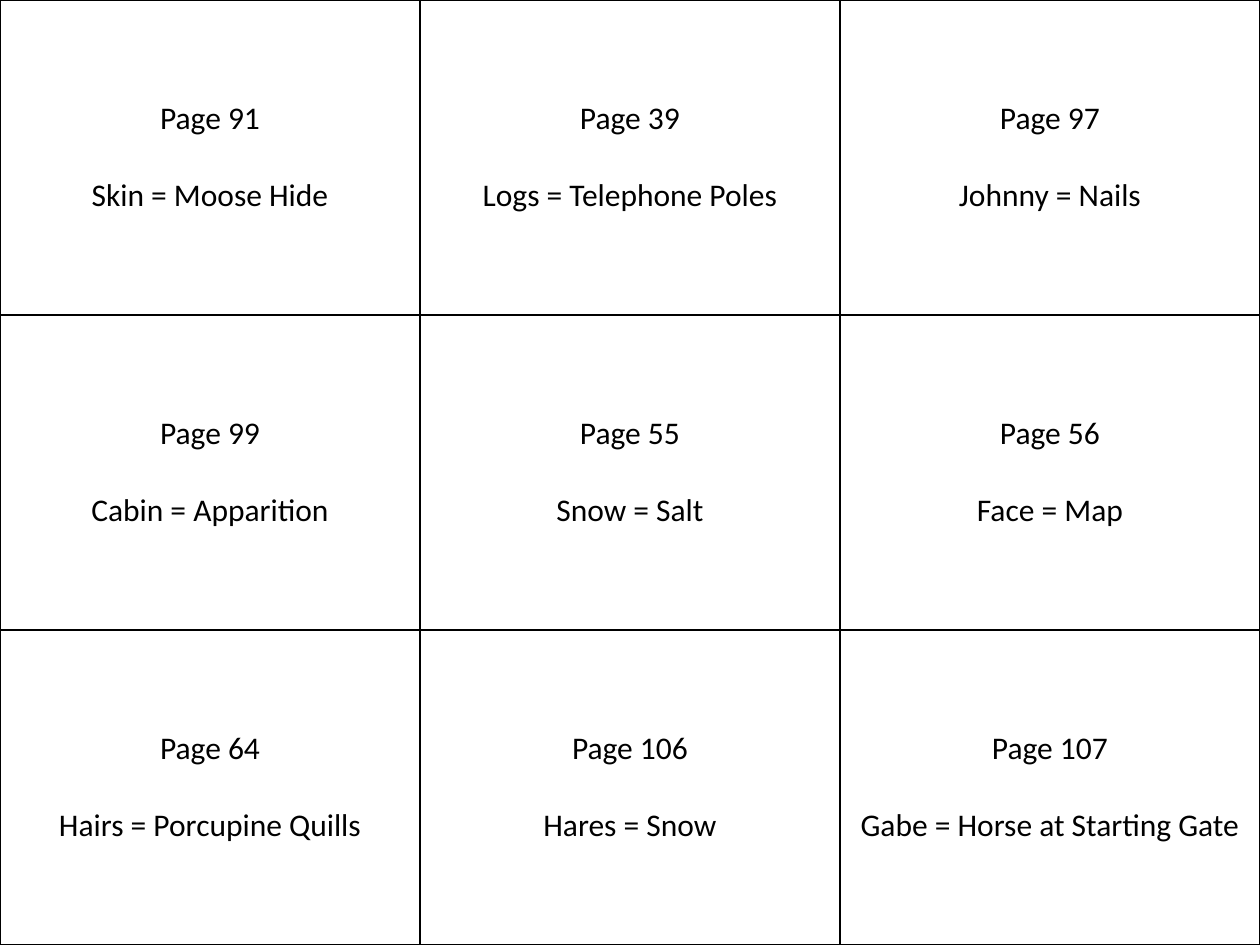
"""Build a three-by-three grid of page and metaphor cards."""
from dataclasses import dataclass

import pptx
import pptx.dml.color
import pptx.enum.text
import pptx.oxml
import pptx.oxml.ns
import pptx.table
import pptx.util

BLACK = pptx.dml.color.RGBColor(0x00, 0x00, 0x00)
WIDTH, HEIGHT = pptx.util.Inches(10), pptx.util.Inches(7.5)
COLS = ROWS = 3
LINE_GAP = pptx.util.Pt(22)
BORDER = pptx.util.Pt(1)
FONT = {"name": "Calibri", "size": pptx.util.Pt(18), "bold": False}


@dataclass(frozen=True)
class Card:
    """A page number and the comparison found on it."""

    page: int
    subject: str
    image: str


CARDS = [
    Card(91, "Skin", "Moose Hide"),
    Card(39, "Logs", "Telephone Poles"),
    Card(97, "Johnny", "Nails"),
    Card(99, "Cabin", "Apparition"),
    Card(55, "Snow", "Salt"),
    Card(56, "Face", "Map"),
    Card(64, "Hairs", "Porcupine Quills"),
    Card(106, "Hares", "Snow"),
    Card(107, "Gabe", "Horse at Starting Gate"),
]


def add_borders(cell: pptx.table._Cell) -> None:
    """Draw a solid line on all four sides of a cell."""
    props = cell._tc.get_or_add_tcPr()
    for i, side in enumerate(("lnL", "lnR", "lnT", "lnB")):
        line = pptx.oxml.parse_xml(
            f'<a:{side} {pptx.oxml.ns.nsdecls("a")} w="{BORDER}"><a:solidFill>'
            f'<a:srgbClr val="{BLACK}"/></a:solidFill></a:{side}>'
        )
        props.insert(i, line)


def fill_cell(cell: pptx.table._Cell, card: Card) -> None:
    """Write a card into a cell and centre it."""
    cell.fill.background()
    cell.vertical_anchor = pptx.enum.text.MSO_ANCHOR.MIDDLE
    tf = cell.text_frame
    tf.text = f"Page {card.page}\n{card.subject} = {card.image}"
    for p in tf.paragraphs:
        p.alignment = pptx.enum.text.PP_ALIGN.CENTER
        for r in p.runs:
            for name, value in FONT.items():
                setattr(r.font, name, value)
            r.font.color.rgb = BLACK
    tf.paragraphs[-1].space_before = LINE_GAP
    add_borders(cell)


def main() -> None:
    """Create the slide and save it."""
    prs = pptx.Presentation()
    prs.slide_width, prs.slide_height = WIDTH, HEIGHT
    s = prs.slides.add_slide(prs.slide_layouts[6])
    table = s.shapes.add_table(ROWS, COLS, 0, 0, WIDTH, HEIGHT).table
    table.first_row = table.horz_banding = False
    for cell, card in zip(table.iter_cells(), CARDS):
        fill_cell(cell, card)
    prs.save("out.pptx")


if __name__ == "__main__":
    main()
